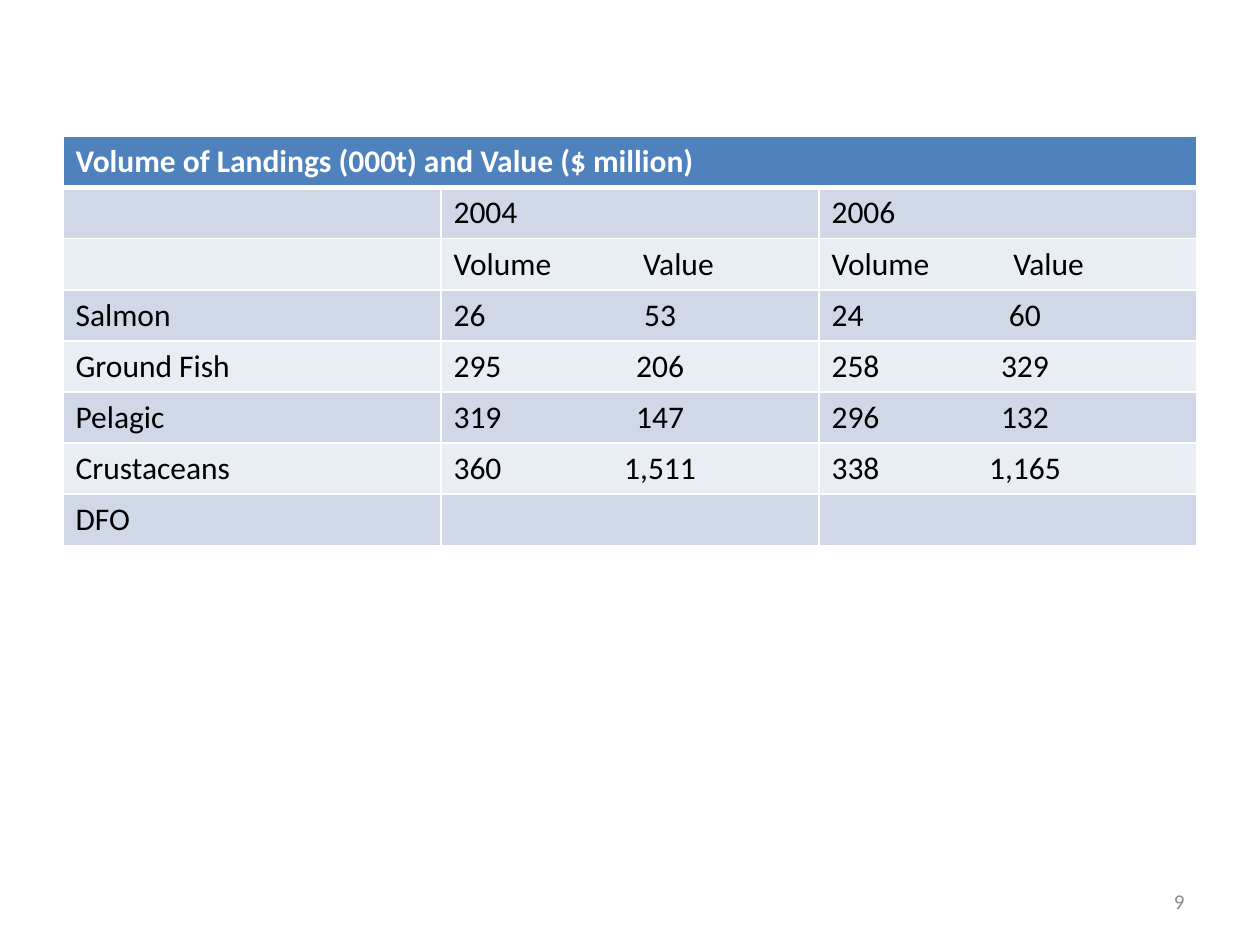
from dataclasses import dataclass
from typing import NamedTuple

from lxml import etree
from pptx import Presentation
from pptx.dml.color import RGBColor
from pptx.enum.text import MSO_ANCHOR, PP_ALIGN
from pptx.oxml.ns import qn
from pptx.util import Pt

MIDDLE = MSO_ANCHOR.MIDDLE
LEFT = PP_ALIGN.LEFT
RIGHT = PP_ALIGN.RIGHT


@dataclass(frozen=True)
class Theme:
    font: str = "Calibri"
    table_size: float = 18
    number_size: float = 12
    header: str = "4F81BD"
    bands: tuple[str, str] = ("D0D8E8", "E9EDF4")
    white: str = "FFFFFF"
    black: str = "000000"
    grey: str = "8C8C8C"
    border: float = 1
    header_border: float = 3


class Landing(NamedTuple):
    label: str
    year_2004: tuple[str, ...] = ()
    year_2006: tuple[str, ...] = ()
    value_centres: tuple[float, float] = (118, 110.5)


THEME = Theme()
TITLE = "Volume of Landings (000t) and Value ($ million)"
MEASURES = ("Volume", "Value")
LANDINGS = [
    Landing("", ("2004",), ("2006",)),
    Landing("", MEASURES, MEASURES, (128.5, 124)),
    Landing("Salmon", ("26", "53"), ("24", "60")),
    Landing("Ground Fish", ("295", "206"), ("258", "329")),
    Landing("Pelagic", ("319", "147"), ("296", "132")),
    Landing("Crustaceans", ("360", "1,511"), ("338", "1,165")),
    Landing("DFO"),
]


def write(paragraph, text: str, size: float, colour: str,
          bold: bool = False, align=LEFT) -> None:
    paragraph.text = text
    paragraph.alignment = align
    font_format = {"name": THEME.font, "size": Pt(size), "bold": bold}
    for font in (paragraph.font, *(run.font for run in paragraph.runs)):
        for attribute, value in font_format.items():
            setattr(font, attribute, value)
        font.color.rgb = RGBColor.from_string(colour)


def add_centre_tab(paragraph, position: float) -> None:
    properties = paragraph.font._element.getparent()
    stops = etree.Element(qn("a:tabLst"))
    etree.SubElement(stops, qn("a:tab"), pos=str(Pt(position)), algn="ctr")
    properties.insert(0, stops)


def style_cell(cell, fill: str, top: float, bottom: float) -> None:
    properties = cell._tc.get_or_add_tcPr()
    borders = {"L": THEME.border, "R": THEME.border, "T": top, "B": bottom}
    for side, width in borders.items():
        line = etree.SubElement(properties, qn(f"a:ln{side}"), w=str(Pt(width)))
        solid = etree.SubElement(line, qn("a:solidFill"))
        etree.SubElement(solid, qn("a:srgbClr"), val=THEME.white)
    cell.fill.solid()
    cell.fill.fore_color.rgb = RGBColor.from_string(fill)


def add_landings_table(slide) -> None:
    row_count = len(LANDINGS) + 1
    table = slide.shapes.add_table(
        row_count, 3, Pt(36), Pt(78), Pt(648), Pt(29.16 * row_count)).table

    for cell in table.rows[0].cells:
        style_cell(cell, THEME.header, THEME.border, THEME.header_border)
    heading = table.cell(0, 0)
    heading.merge(table.cell(0, 2))
    write(heading.text_frame.paragraphs[0], TITLE, THEME.table_size,
          THEME.white, bold=True)

    for index, landing in enumerate(LANDINGS):
        top = THEME.border if index else THEME.header_border
        texts = (landing.label, "\t".join(landing.year_2004),
                 "\t".join(landing.year_2006))
        centres = (None, *landing.value_centres)
        for column, (text, centre) in enumerate(zip(texts, centres)):
            cell = table.cell(index + 1, column)
            style_cell(cell, THEME.bands[index % 2], top, THEME.border)
            paragraph = cell.text_frame.paragraphs[0]
            write(paragraph, text, THEME.table_size, THEME.black)
            if "\t" in text:
                add_centre_tab(paragraph, centre)


def add_page_number(slide, number: str) -> None:
    frame = slide.shapes.add_textbox(
        Pt(516), Pt(500.5), Pt(168), Pt(28.75)).text_frame
    for attribute, value in {"word_wrap": True, "vertical_anchor": MIDDLE}.items():
        setattr(frame, attribute, value)
    write(frame.paragraphs[0], number, THEME.number_size, THEME.grey, align=RIGHT)


def main() -> None:
    presentation = Presentation()
    presentation.slide_width = Pt(720)
    presentation.slide_height = Pt(540)
    slide = presentation.slides.add_slide(presentation.slide_layouts[6])
    add_landings_table(slide)
    add_page_number(slide, "9")
    presentation.save("out.pptx")


if __name__ == "__main__":
    main()
